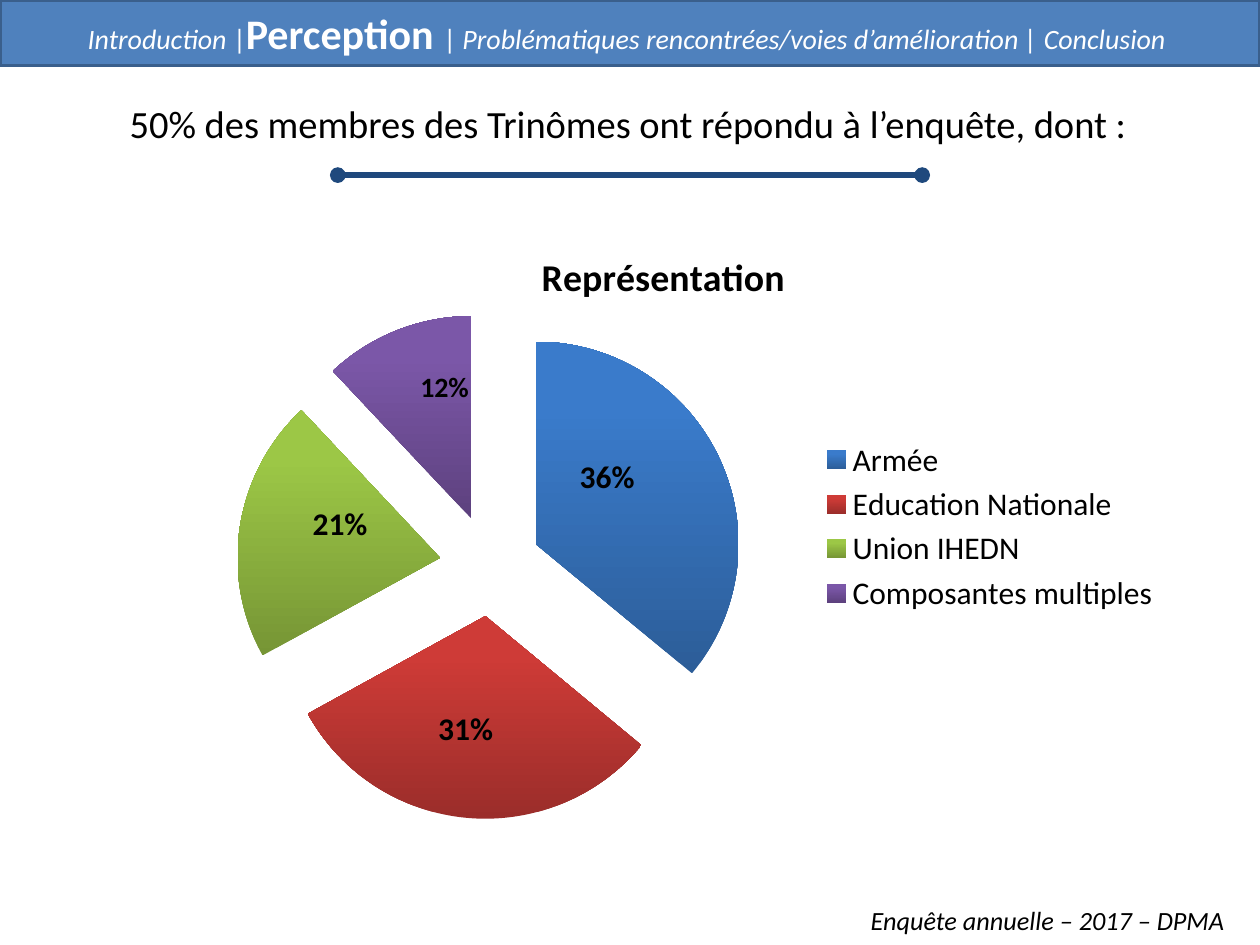
import lxml.etree
import pptx
import pptx.chart.data
import pptx.dml.color
import pptx.enum.chart
import pptx.enum.shapes
import pptx.enum.text
import pptx.oxml.ns
import pptx.oxml.xmlchemy
import pptx.util

Cm = pptx.util.Cm
Pt = pptx.util.Pt
RGBColor = pptx.dml.color.RGBColor
qn = pptx.oxml.ns.qn
OxmlElement = pptx.oxml.xmlchemy.OxmlElement

FONT = "Calibri"
WHITE = RGBColor(0xFF, 0xFF, 0xFF)
BLACK = RGBColor(0x00, 0x00, 0x00)
BANNER = RGBColor(0x4F, 0x81, 0xBD)
BANNER_EDGE = RGBColor(0x3A, 0x5F, 0x8C)
NAVY = RGBColor(0x1F, 0x49, 0x7D)
BLUES = RGBColor(0x2C, 0x5D, 0x98), RGBColor(0x3A, 0x7B, 0xCB)
REDS = RGBColor(0x9B, 0x2D, 0x2A), RGBColor(0xCE, 0x3B, 0x37)
GREENS = RGBColor(0x76, 0x95, 0x35), RGBColor(0x9C, 0xC7, 0x46)
PURPLES = RGBColor(0x5D, 0x41, 0x7E), RGBColor(0x7B, 0x57, 0xA8)

# name, percentage, (dark, light), label size, label shift from slice centre
SLICES = [
    ("Armée", 36, BLUES, 18, (-0.02, -0.04)),
    ("Education Nationale", 31, REDS, 18, (-0.01, 0.02)),
    ("Union IHEDN", 21, GREENS, 18, (0, -0.03)),
    ("Composantes multiples", 12, PURPLES, 16, (0.01, -0.06)),
]


def set_font(font, size, color=BLACK, bold=False, italic=False):
    font.name = FONT
    font.size = Pt(size)
    font.color.rgb = color
    font.bold = bold
    font.italic = italic


def add_banner(slide, width):
    sp = slide.shapes.add_shape(
        pptx.enum.shapes.MSO_SHAPE.RECTANGLE, 0, 0, width, Cm(1.32))
    sp.shadow.inherit = False
    sp.fill.solid()
    sp.fill.fore_color.rgb = BANNER
    sp.line.color.rgb = BANNER_EDGE
    sp.line.width = Pt(2)
    sp.text_frame.vertical_anchor = pptx.enum.text.MSO_ANCHOR.MIDDLE
    p = sp.text_frame.paragraphs[0]
    p.alignment = pptx.enum.text.PP_ALIGN.CENTER
    for text, size, bold, italic in [
        ("Introduction ", 16, False, True),
        ("|", 16, False, False),
        ("Perception ", 24, True, False),
        ("| ", 16, False, False),
        ("Problématiques rencontrées/voies d’amélioration | Conclusion ",
         16, False, True),
    ]:
        r = p.add_run()
        r.text = text
        set_font(r.font, size, WHITE, bold, italic)


def write_line(sp, text, size, italic=False):
    """Put one unwrapped, left-aligned line at the top of a shape."""
    tf = sp.text_frame
    tf.text = text
    tf.word_wrap = False
    tf.auto_size = pptx.enum.text.MSO_AUTO_SIZE.NONE
    tf.vertical_anchor = pptx.enum.text.MSO_ANCHOR.TOP
    p = tf.paragraphs[0]
    p.alignment = pptx.enum.text.PP_ALIGN.LEFT
    set_font(p.font, size, italic=italic)


def add_title(slide):
    title = slide.shapes.title
    title.left, title.top = Cm(2.36), Cm(1.88)
    title.width, title.height = Cm(20.65), Cm(1.3)
    write_line(
        title, "50% des membres des Trinômes ont répondu à l’enquête, dont :", 22)


def add_rule(slide):
    """Add the rule with a round dot at each end."""
    line = slide.shapes.add_connector(
        pptx.enum.shapes.MSO_CONNECTOR.STRAIGHT,
        Cm(6.81), Cm(3.53), Cm(18.59), Cm(3.53))
    line.line.color.rgb = NAVY
    line.line.width = Pt(3)
    ln = line.line._get_or_add_ln()
    for end in ("a:headEnd", "a:tailEnd"):
        lxml.etree.SubElement(ln, qn(end), type="oval")
    lxml.etree.SubElement(line._element.spPr, qn("a:effectLst"))


def make_layout(**values):
    layout = OxmlElement("c:layout")
    manual = lxml.etree.SubElement(layout, qn("c:manualLayout"))
    for key, value in values.items():
        lxml.etree.SubElement(manual, qn("c:" + key), val=str(value))
    return layout


def format_slice(series, index, shades, size, shift):
    point = series.points[index]
    fill = point.format.fill
    fill.gradient()
    fill.gradient_angle = 90
    for stop, color, position in zip(fill.gradient_stops, shades, (0, 0.8)):
        stop.color.rgb = color
        stop.position = position
    explosion = OxmlElement("c:explosion")
    explosion.set("val", "25")
    dpt = series._element.get_or_add_dPt_for_point(index)
    dpt.find(qn("c:spPr")).addprevious(explosion)

    label = point.data_label
    set_font(label.font, size, bold=True)
    label.position = pptx.enum.chart.XL_LABEL_POSITION.CENTER
    dlbl = label._get_or_add_dLbl()
    dlbl.find(qn("c:showVal")).set("val", "0")
    dlbl.find(qn("c:showPercent")).set("val", "1")
    dlbl.find(qn("c:idx")).addnext(make_layout(x=shift[0], y=shift[1]))


def add_pie(slide):
    data = pptx.chart.data.CategoryChartData()
    data.categories = [s[0] for s in SLICES]
    data.add_series("Représentation", [s[1] for s in SLICES])
    chart = slide.shapes.add_chart(
        pptx.enum.chart.XL_CHART_TYPE.PIE,
        Cm(3.1), Cm(4.52), Cm(20.55), Cm(12.19), data).chart
    set_font(chart.font, 18)

    chart.has_title = True
    chart.chart_title.include_in_layout = False
    tf = chart.chart_title.text_frame
    tf.text = "Représentation"
    set_font(tf.paragraphs[0].font, 21.6, bold=True)

    chart.has_legend = True
    chart.legend.position = pptx.enum.chart.XL_LEGEND_POSITION.RIGHT
    chart.legend.include_in_layout = False

    plot = chart.plots[0]
    plot.vary_by_categories = True
    plot.has_data_labels = True
    plot.data_labels.show_percentage = True
    plot.data_labels.show_value = False
    for i, (_, _, shades, size, shift) in enumerate(SLICES):
        format_slice(plot.series[0], i, shades, size, shift)

    area = chart._chartSpace.chart.plotArea
    for old in area.findall(qn("c:layout")):
        area.remove(old)
    area.insert(0, make_layout(
        layoutTarget="inner", xMode="edge", yMode="edge",
        x=0.13, y=0.23, w=0.4, h=0.67))


def add_source(slide):
    box = slide.shapes.add_textbox(Cm(17.3), Cm(18.11), Cm(8.2), Cm(0.89))
    write_line(box, "Enquête annuelle – 2017 – DPMA", 15, italic=True)


def main():
    prs = pptx.Presentation()
    prs.slide_width, prs.slide_height = Cm(25.4), Cm(19.05)
    slide = prs.slides.add_slide(prs.slide_layouts[5])
    add_banner(slide, prs.slide_width)
    add_title(slide)
    add_rule(slide)
    add_pie(slide)
    add_source(slide)
    prs.save("out.pptx")


if __name__ == "__main__":
    main()
